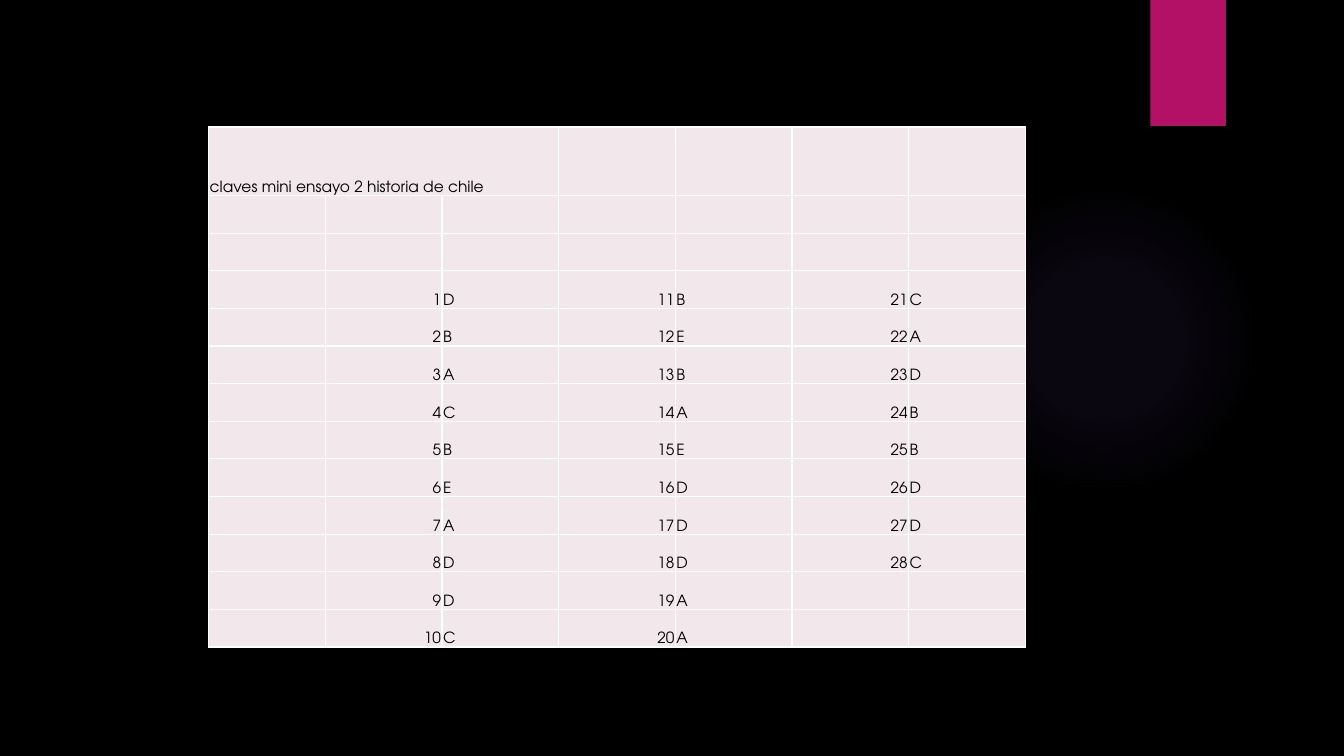
"""Builds the answer-key slide for the second Chilean history mini test."""
import dataclasses

import lxml.etree
import pptx
import pptx.dml.color
import pptx.enum.shapes
import pptx.enum.text
import pptx.oxml
import pptx.oxml.ns
import pptx.util

Inches = pptx.util.Inches
TITLE = "claves mini ensayo 2 historia de chile"
ANSWERS = "DBACBEADDC" "BEBAEDDDAA" "CADBBDDC"
ANSWERS_PER_BLOCK = 10
FIRST_ANSWER_ROW = 3
COLUMN_COUNT = 7


@dataclasses.dataclass(frozen=True)
class Theme:
    """Colours and type of the slide."""
    background: str = "000000"
    glow: str = "9B6BF2"
    accent: str = "B31166"
    cell: str = "F2E7EA"
    border: str = "FFFFFF"
    text: str = "000000"
    font: str = "TeX Gyre Adventor"
    text_size: float = 11
    border_width: float = 1


class SlideBuilder:
    """Draws elements on one slide in one theme."""

    def __init__(self, slide, theme):
        self.slide = slide
        self.theme = theme
        self.paint(slide.background.fill, theme.background)

    def paint(self, fill, colour):
        """Apply a solid colour to a fill."""
        fill.solid()
        fill.fore_color.rgb = pptx.dml.color.RGBColor.from_string(colour)

    def shape(self, kind, left, top, width, height):
        """Add a preset shape without line or shadow."""
        shape = self.slide.shapes.add_shape(
            kind, Inches(left), Inches(top), Inches(width), Inches(height))
        shape.shadow.inherit = False
        shape.line.fill.background()
        return shape

    def ribbon(self, left, top, width, height):
        """Add the accent rectangle."""
        kind = pptx.enum.shapes.MSO_SHAPE.RECTANGLE
        self.paint(self.shape(kind, left, top, width, height).fill, self.theme.accent)

    def glow(self, left, top, diameter, stops):
        """Add a circle that fades out along (position, opacity) percentages."""
        circle = self.shape(pptx.enum.shapes.MSO_SHAPE.OVAL, left, top, diameter, diameter)
        circle.fill.background()
        stop_xml = "".join(
            f'<a:gs pos="{position * 1000}"><a:srgbClr val="{self.theme.glow}">'
            f'<a:alpha val="{opacity * 1000}"/></a:srgbClr></a:gs>'
            for position, opacity in stops)
        gradient = pptx.oxml.parse_xml(
            f'<a:gradFill {pptx.oxml.ns.nsdecls("a")}><a:gsLst>{stop_xml}</a:gsLst>'
            '<a:path path="circle"><a:fillToRect l="50000" t="50000" r="50000" b="50000"/>'
            '</a:path></a:gradFill>')
        properties = circle._element.spPr
        properties.replace(properties.find(pptx.oxml.ns.qn("a:noFill")), gradient)

    def borders(self, cell):
        """Draw a thin line on every side of a cell."""
        properties = cell._tc.get_or_add_tcPr()
        for side in ("lnL", "lnR", "lnT", "lnB"):
            line = lxml.etree.SubElement(
                properties, pptx.oxml.ns.qn(f"a:{side}"),
                w=str(pptx.util.Pt(self.theme.border_width)))
            fill = lxml.etree.SubElement(line, pptx.oxml.ns.qn("a:solidFill"))
            lxml.etree.SubElement(
                fill, pptx.oxml.ns.qn("a:srgbClr"), val=self.theme.border)

    def table(self, left, top, width, height, row_count, header_height):
        """Add an empty table with a taller first row."""
        table = self.slide.shapes.add_table(
            row_count, COLUMN_COUNT, Inches(left), Inches(top),
            Inches(width), Inches(height)).table
        table.first_row = False
        table.horz_banding = False
        for column in table.columns:
            column.width = Inches(width / COLUMN_COUNT)
        for row in table.rows:
            row.height = Inches((height - header_height) / (row_count - 1))
        table.rows[0].height = Inches(header_height)
        for cell in table.iter_cells():
            cell.margin_left = cell.margin_right = cell.margin_top = Inches(0.01)
            cell.margin_bottom = 0
            cell.vertical_anchor = pptx.enum.text.MSO_ANCHOR.BOTTOM
            self.borders(cell)
            self.paint(cell.fill, self.theme.cell)
        return table

    def cell_text(self, cell, text, alignment=pptx.enum.text.PP_ALIGN.LEFT):
        """Put one run of text in a cell."""
        paragraph = cell.text_frame.paragraphs[0]
        paragraph.alignment = alignment
        run = paragraph.add_run()
        run.text = text
        run.font.name = self.theme.font
        run.font.size = pptx.util.Pt(self.theme.text_size)
        self.paint(run.font.fill, self.theme.text)


def main():
    """Build and save the presentation."""
    presentation = pptx.Presentation()
    presentation.slide_width = Inches(13.33)
    presentation.slide_height = Inches(7.5)
    slide = presentation.slides.add_slide(presentation.slide_layouts[6])
    builder = SlideBuilder(slide, Theme())
    builder.glow(9.41, 1.83, 3.08, [(0, 7), (36, 6), (69, 0)])
    builder.ribbon(11.41, 0, 0.75, 1.25)

    row_count = FIRST_ANSWER_ROW + ANSWERS_PER_BLOCK
    table = builder.table(2.07, 1.26, 8.1, 5.16, row_count, 0.68)
    table.cell(0, 0).merge(table.cell(0, 2))
    builder.cell_text(table.cell(0, 0), TITLE)
    for index, answer in enumerate(ANSWERS):
        block, offset = divmod(index, ANSWERS_PER_BLOCK)
        row, column = FIRST_ANSWER_ROW + offset, 1 + 2 * block
        builder.cell_text(table.cell(row, column), str(index + 1),
                          pptx.enum.text.PP_ALIGN.RIGHT)
        builder.cell_text(table.cell(row, column + 1), answer)
    presentation.save("out.pptx")


if __name__ == "__main__":
    main()
